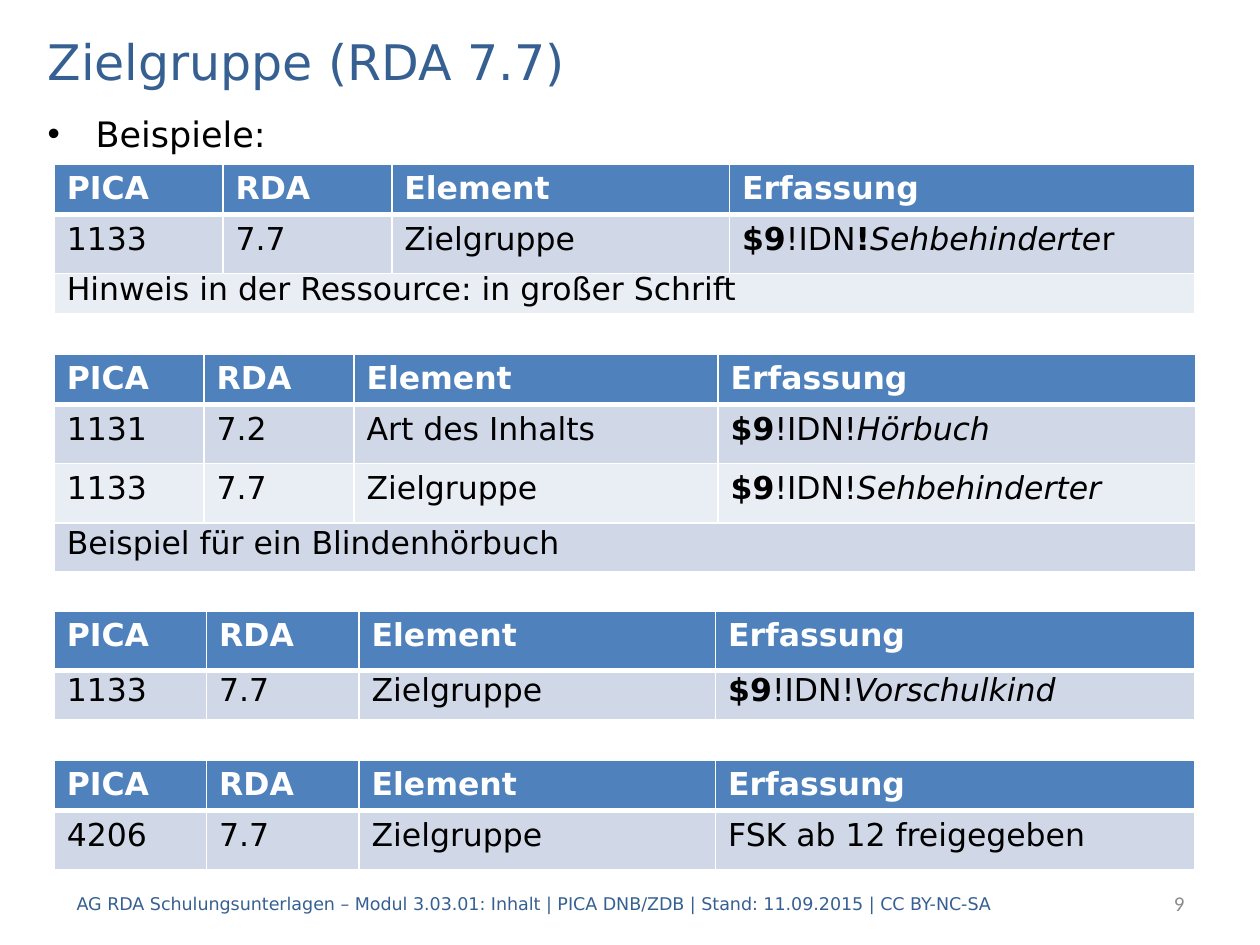
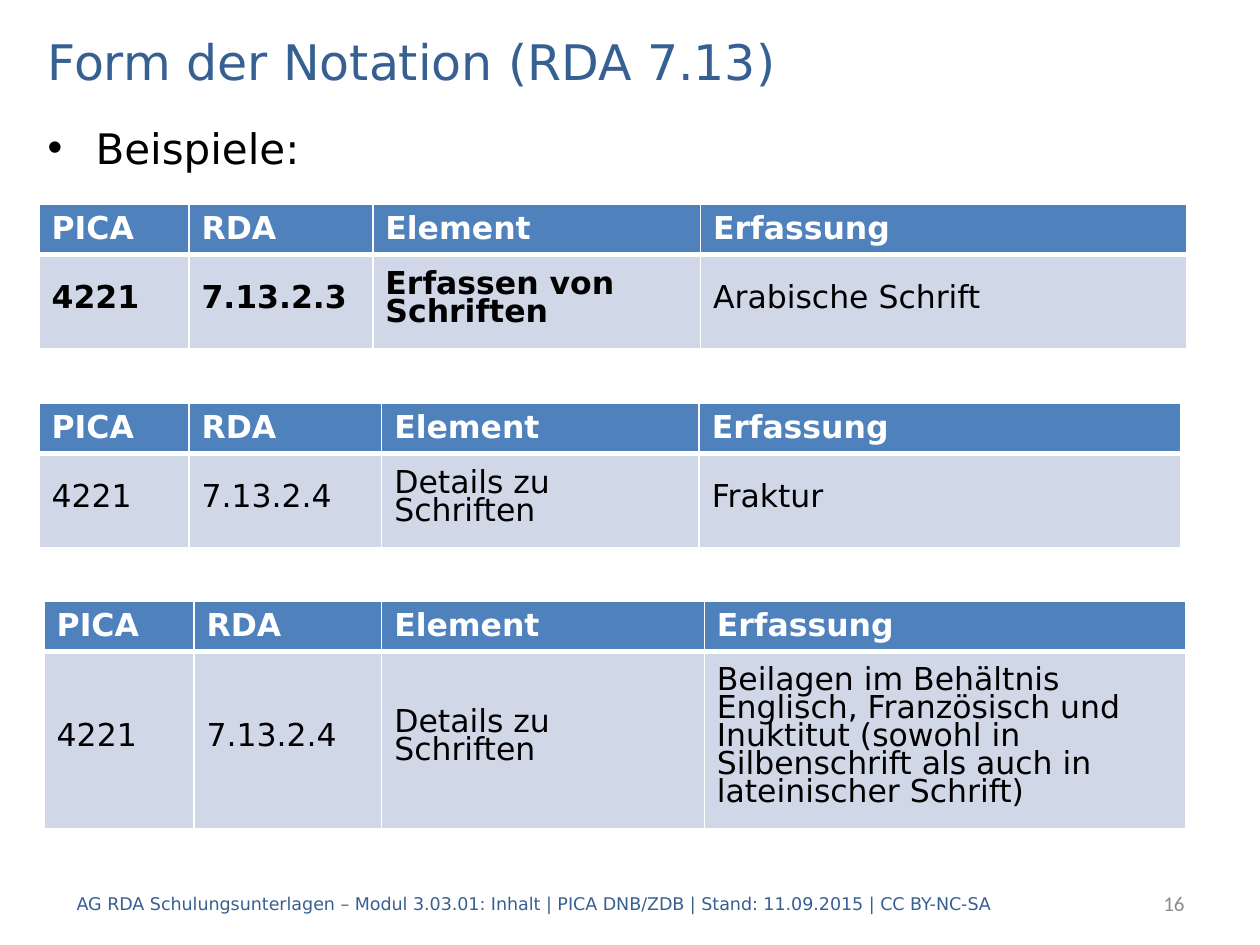
from lxml.etree import SubElement
from pptx import Presentation
from pptx.dml.color import RGBColor
from pptx.enum.text import MSO_ANCHOR as Anchor, PP_ALIGN as Align
from pptx.oxml import parse_xml
from pptx.oxml.ns import nsdecls, qn
from pptx.util import Inches, Pt

COLORS = {
    "blue": "376092",
    "header": "4F81BD",
    "band_dark": "D0D8E8",
    "band_light": "E9EDF4",
    "white": "FFFFFF",
    "black": "000000",
    "gray": "8C8C8C",
}
FONT = "DejaVu Sans"
FOOTER = ("AG RDA Schulungsunterlagen – Modul 3.03.01: Inhalt | "
          "PICA DNB/ZDB | Stand: 11.09.2015 | CC BY-NC-SA")
HEADINGS = ["PICA", "RDA", "Element", "Erfassung"]
BOLD = {"bold": True}
ITALIC = {"italic": True}
BODY_SPACING = {
    "line_spacing": Pt(16),
    "space_before": Pt(6),
    "space_after": Pt(6),
}


def apply(target, values):
    for name, value in values.items():
        setattr(target, name, value)


def authority_link(term):
    return [("$9", BOLD), ("!IDN!", {}), (term, ITALIC)]


class Deck:
    def __init__(self):
        self.presentation = Presentation()
        apply(self.presentation,
              {"slide_width": Inches(10), "slide_height": Inches(7.5)})
        self.slide = None

    def add_slide(self, title, number):
        layout = self.presentation.slide_layouts[6]
        self.slide = self.presentation.slides.add_slide(layout)
        self.add_text(title, (0.28, 0.2, 9.45, 0.56), 28, "blue")
        self.add_text(FOOTER, (0.51, 6.97, 9.06, 0.4), 10, "blue")
        self.add_text(str(number), (7.91, 6.97, 1.59, 0.4), 12, "gray",
                      font="Calibri", align=Align.RIGHT)

    def add_run(self, paragraph, text, size, color, font=FONT, **style):
        run = paragraph.add_run()
        run.text = text
        values = {"name": font, "size": Pt(size), "bold": False, "italic": False}
        apply(run.font, values | style)
        run.font.color.rgb = RGBColor.from_string(COLORS[color])

    def add_text(self, text, box, size, color, font=FONT,
                 align=Align.LEFT, anchor=Anchor.MIDDLE):
        shape = self.slide.shapes.add_textbox(*map(Inches, box))
        apply(shape.text_frame, {"word_wrap": True, "vertical_anchor": anchor})
        paragraph = shape.text_frame.paragraphs[0]
        paragraph.alignment = align
        self.add_run(paragraph, text, size, color, font)
        return paragraph

    def add_bullet(self, text, box, size):
        paragraph = self.add_text(text, box, size, "black", anchor=Anchor.TOP)
        properties = paragraph._p.get_or_add_pPr()
        indent = Inches(0.38)
        properties.set("marL", str(indent))
        properties.set("indent", str(-indent))
        SubElement(properties, qn("a:buFont")).set("typeface", "Arial")
        SubElement(properties, qn("a:buChar")).set("char", "•")

    def add_borders(self, cell, top, bottom):
        properties = cell._tc.get_or_add_tcPr()
        widths = {"lnL": 1, "lnR": 1, "lnT": top, "lnB": bottom}
        for position, (side, width) in enumerate(widths.items()):
            properties.insert(position, parse_xml(
                f'<a:{side} {nsdecls("a")} w="{Pt(width)}"><a:solidFill>'
                f'<a:srgbClr val="{COLORS["white"]}"/></a:solidFill></a:{side}>'))

    def fill_cell(self, cell, content, row_index):
        is_header = row_index == 0
        if is_header:
            fill, color, style = "header", "white", BOLD
        else:
            fill = "band_dark" if row_index % 2 else "band_light"
            color, style = "black", {}
        cell.fill.solid()
        cell.fill.fore_color.rgb = RGBColor.from_string(COLORS[fill])
        self.add_borders(cell, 3 if row_index == 1 else 1, 3 if is_header else 1)
        cell.vertical_anchor = Anchor.TOP if is_header else Anchor.MIDDLE
        if not content:
            return
        paragraph = cell.text_frame.paragraphs[0]
        if not is_header:
            apply(paragraph, BODY_SPACING)
        runs = [(content, {})] if isinstance(content, str) else content
        for text, extra in runs:
            self.add_run(paragraph, text, 18, color, **(style | extra))

    def add_table(self, left, top, widths, heights, entries):
        rows = [HEADINGS, *entries]
        frame = self.slide.shapes.add_table(
            len(rows), len(widths), Inches(left), Inches(top),
            Inches(sum(widths)), Inches(sum(heights)))
        table = frame.table
        table.horz_banding = False
        for column, width in zip(table.columns, widths):
            column.width = Inches(width)
        for row, height in zip(table.rows, heights):
            row.height = Inches(height)
        for row_index, contents in enumerate(rows):
            padding = [""] * (len(widths) - len(contents))
            for column_index, content in enumerate([*contents, *padding]):
                self.fill_cell(table.cell(row_index, column_index),
                               content, row_index)
            if padding:
                table.cell(row_index, 0).merge(
                    table.cell(row_index, len(widths) - 1))


def build_audience(deck):
    deck.add_slide("Zielgruppe (RDA 7.7)", 9)
    deck.add_bullet("Beispiele:", (0.28, 0.84, 7.22, 0.44), 20)
    narrow = (1.21, 1.21, 2.83, 3.8)
    large_print = [("$9", BOLD), ("!IDN", {}), ("!", BOLD),
                   ("Sehbehinderte", ITALIC), ("r", {})]
    tables = [
        (1.3, (1.34, 1.34, 2.68, 3.69), (0.39, 0.47, 0.32), [
            ["1133", "7.7", "Zielgruppe", large_print],
            ["Hinweis in der Ressource: in großer Schrift"],
        ]),
        (2.81, (1.19, 1.19, 2.89, 3.79), (0.4, 0.47, 0.47, 0.39), [
            ["1131", "7.2", "Art des Inhalts", authority_link("Hörbuch")],
            ["1133", "7.7", "Zielgruppe", authority_link("Sehbehinderter")],
            ["Beispiel für ein Blindenhörbuch"],
        ]),
        (4.85, narrow, (0.47, 0.39), [
            ["1133", "7.7", "Zielgruppe", authority_link("Vorschulkind")],
        ]),
        (6.03, narrow, (0.39, 0.47), [
            ["4206", "7.7", "Zielgruppe", "FSK ab 12 freigegeben"],
        ]),
    ]
    for table in tables:
        deck.add_table(0.43, *table)


def build_notation(deck):
    deck.add_slide("Form der Notation (RDA 7.13)", 16)
    deck.add_bullet("Beispiele:", (0.28, 0.92, 9.02, 0.5), 24)
    core_element = [[(text, BOLD)] for text in
                    ("4221", "7.13.2.3", "Erfassen von Schriften")]
    details = ["4221", "7.13.2.4", "Details zu Schriften"]
    tables = [
        (0.31, 1.62, (1.19, 1.46, 2.6, 3.86), 0.75,
         [*core_element, "Arabische Schrift"]),
        (0.31, 3.2, (1.19, 1.53, 2.52, 3.82), 0.75, [*details, "Fraktur"]),
        (0.35, 4.77, (1.19, 1.49, 2.56, 3.82), 1.41,
         [*details, "Beilagen im Behältnis Englisch, Französisch und Inuktitut "
                    "(sowohl in Silbenschrift als auch in lateinischer Schrift)"]),
    ]
    for left, top, widths, height, entry in tables:
        deck.add_table(left, top, widths, (0.4, height), [entry])


def main():
    deck = Deck()
    build_audience(deck)
    build_notation(deck)
    deck.presentation.save("out.pptx")


if __name__ == "__main__":
    main()
